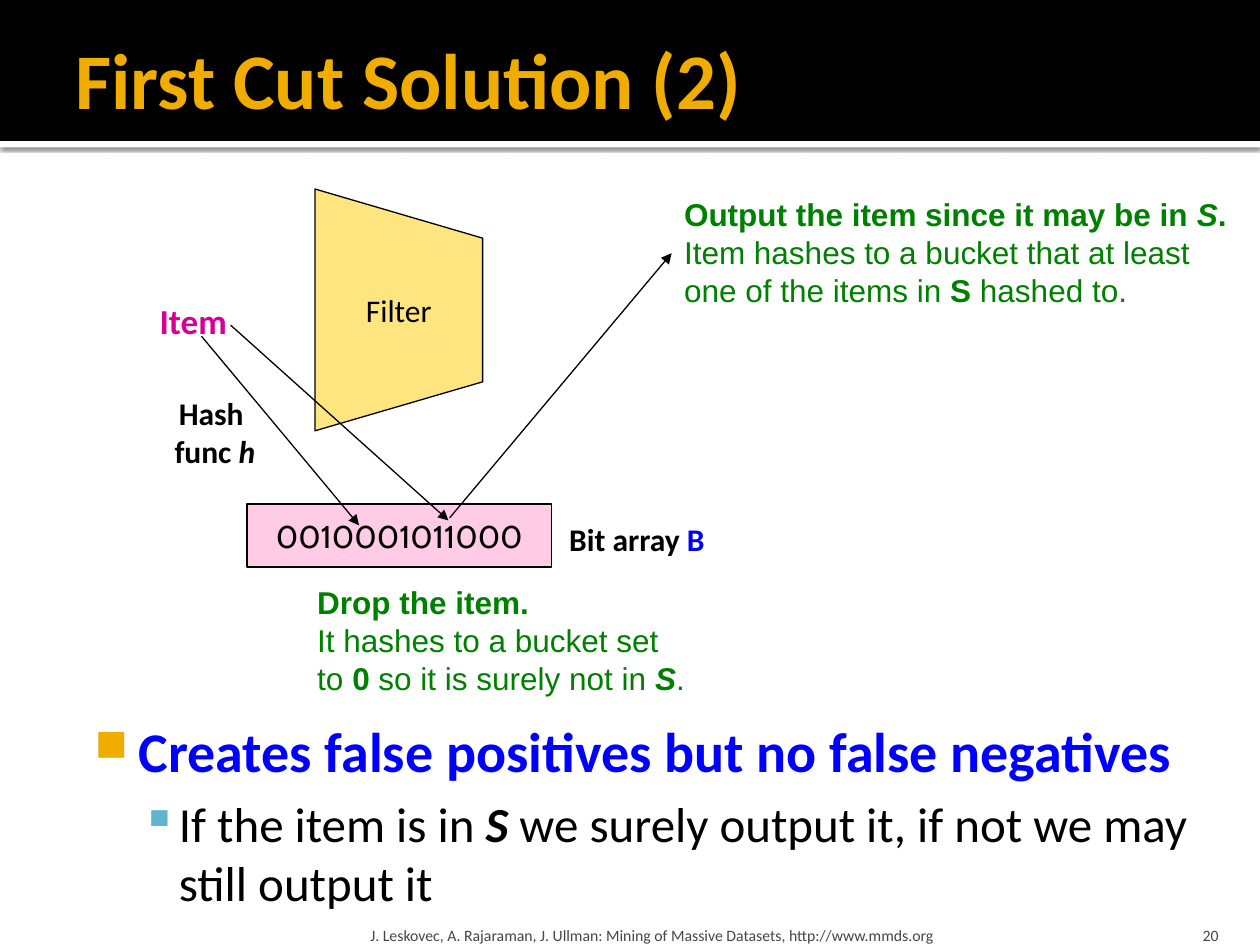
import pptx
import pptx.util
import pptx.dml.color
import pptx.enum.shapes
import pptx.enum.text
import pptx.oxml
import lxml.etree

Pt = pptx.util.Pt
ALIGN = pptx.enum.text.PP_ALIGN
ANCHOR = pptx.enum.text.MSO_ANCHOR
RECTANGLE = pptx.enum.shapes.MSO_SHAPE.RECTANGLE
STRAIGHT = pptx.enum.shapes.MSO_CONNECTOR.STRAIGHT
NAMESPACE = "http://schemas.openxmlformats.org/drawingml/2006/main"
PLAIN = {"bold": False}
BOLD = {"bold": True}
ITALIC = {"bold": True, "italic": True}


def set_color(color_format, value):
    color_format.rgb = pptx.dml.color.RGBColor.from_string(value)


def write(shape, paragraphs, font, frame=None, align=ALIGN.LEFT):
    text_frame = shape.text_frame
    for name, value in {"word_wrap": False, **(frame or {})}.items():
        setattr(text_frame, name, value)
    for index, runs in enumerate(paragraphs):
        paragraph = text_frame.add_paragraph() if index else text_frame.paragraphs[0]
        paragraph.alignment = align
        for text, changes in runs:
            for number, line in enumerate(text.split("\n")):
                if number:
                    paragraph.add_line_break()
                run = paragraph.add_run()
                run.text = line
                values = {**font, **changes}
                set_color(run.font.color, values.pop("color"))
                for name, value in values.items():
                    setattr(run.font, name, value)


presentation = pptx.Presentation()
presentation.slide_width = Pt(720)
presentation.slide_height = Pt(540)
slide = presentation.slides.add_slide(presentation.slide_layouts[6])
shapes = slide.shapes

for top, height, color in [(80.6, 3.6, "FFFFFF"), (0, 80.6, "000000")]:
    band = shapes.add_shape(RECTANGLE, 0, Pt(top), Pt(720), Pt(height))
    band.shadow.inherit = False
    band.fill.solid()
    set_color(band.fill.fore_color, color)
    band.line.fill.background()
    if color == "FFFFFF":
        effects = band._element.spPr.find(f"{{{NAMESPACE}}}effectLst")
        effects.append(pptx.oxml.parse_xml(
            f'<a:outerShdw xmlns:a="{NAMESPACE}" blurRad="{Pt(2.5)}" dist="{Pt(0.8)}" '
            'dir="5400000" rotWithShape="0"><a:srgbClr val="000000">'
            '<a:alpha val="60000"/></a:srgbClr></a:outerShdw>'))

builder = shapes.build_freeform(Pt(180), Pt(246.2), scale=1.0)
builder.add_line_segments(
    [(Pt(x), Pt(y)) for x, y in [(275.8, 218.2), (275.8, 136.1), (180, 108)]])
filter_shape = builder.convert_to_shape()
bit_array = shapes.add_shape(RECTANGLE, Pt(141.1), Pt(288), Pt(174.2), Pt(36))
for shape, color, label, font_name in [
    (filter_shape, "FFCC00", "Filter", "Calibri"),
    (bit_array, "FF99CC", "0010001011000", "Cabin"),
]:
    shape.shadow.inherit = False
    shape.fill.solid()
    set_color(shape.fill.fore_color, color)
    fill_color = shape._element.spPr.find(f".//{{{NAMESPACE}}}srgbClr")
    lxml.etree.SubElement(fill_color, f"{{{NAMESPACE}}}alpha", val="50000")
    set_color(shape.line.color, "000000")
    shape.line.width = Pt(0.75)
    write(shape, [[(label, {})]], {"name": font_name, "size": Pt(18), "color": "000000"},
          {"vertical_anchor": ANCHOR.MIDDLE}, ALIGN.CENTER)

for points in [
    (131.8, 185.8, 256.3, 297.4),
    (257, 295.9, 383.8, 144.7),
    (115.2, 192.2, 205.2, 300.2),
]:
    arrow = shapes.add_connector(STRAIGHT, *[Pt(value) for value in points])
    set_color(arrow.line.color, "000000")
    arrow.line.width = Pt(0.75)
    properties = arrow._element.spPr
    line = properties.find(f"{{{NAMESPACE}}}ln")
    lxml.etree.SubElement(line, f"{{{NAMESPACE}}}tailEnd", type="triangle")
    lxml.etree.SubElement(properties, f"{{{NAMESPACE}}}effectLst")

title_font = {"name": "Calibri", "size": Pt(45), "bold": True, "color": "F0AD00"}
item_font = {"name": "Calibri", "size": Pt(20), "bold": True, "color": "D60093"}
label_font = {"name": "Calibri", "size": Pt(18), "bold": True, "color": "000000"}
result_font = {"name": "Arial", "size": Pt(18), "color": "008000"}
footer_font = {"name": "Calibri", "size": Pt(9), "color": "454545"}
body_font = {"name": "Calibri", "size": Pt(28), "color": "000000"}
title_frame = {"word_wrap": True, "vertical_anchor": ANCHOR.MIDDLE}
footer_frame = {"word_wrap": True, "vertical_anchor": ANCHOR.BOTTOM, "margin_bottom": 0}
body_frame = {"word_wrap": True, "margin_left": Pt(4.3), "margin_top": Pt(7.2)}

text_boxes = [
    ((36, 5.8, 648, 77.8), [[("First Cut Solution (2)", {})]],
     title_font, title_frame, ALIGN.LEFT),
    ((84.2, 167.8, 55.4, 31.7), [[("Item", {})]], item_font, {}, ALIGN.LEFT),
    ((383.8, 108, 327.6, 72.7),
     [[("Output the item since it may be in ", BOLD), ("S", ITALIC), (".", BOLD)],
      [("Item hashes to a bucket that at least \none of the items in ", PLAIN),
       ("S", BOLD), (" hashed to.", PLAIN)]],
     result_font, {}, ALIGN.LEFT),
    ((89.3, 221.8, 67, 51.1), [[("Hash \nfunc ", {}), ("h", ITALIC)]],
     label_font, {"word_wrap": True}, ALIGN.CENTER),
    ((174.2, 329.8, 226.8, 72.7),
     [[("Drop the item.", BOLD)],
      [("It hashes to a bucket set \nto ", PLAIN), ("0", BOLD),
       (" so it is surely not in ", PLAIN), ("S", ITALIC), (".", PLAIN)]],
     result_font, {}, ALIGN.LEFT),
    ((318.2, 293.8, 97.2, 28.8), [[("Bit array ", {}), ("B", {"color": "0000FF"})]],
     label_font, {}, ALIGN.LEFT),
    ((208.1, 518.4, 433.4, 21.6),
     [[("J. Leskovec, A. Rajaraman, J. Ullman: Mining of Massive Datasets, "
        "http://www.mmds.org", {})]],
     footer_font, {**footer_frame, "margin_left": Pt(3.6)}, ALIGN.LEFT),
    ((645.8, 518.4, 57.6, 21.6), [[("20", {})]], footer_font, footer_frame, ALIGN.RIGHT),
    ((40.3, 402.5, 659.5, 125.3),
     [[("Creates false positives but no false negatives",
        {"size": Pt(32), "bold": True, "color": "0000FF"})],
      [("If the item is in ", PLAIN), ("S", ITALIC),
       (" we surely output it, if not we may still output it", PLAIN)]],
     body_font, body_frame, ALIGN.LEFT),
]
for box, paragraphs, font, frame, align in text_boxes:
    text_box = shapes.add_textbox(*[Pt(value) for value in box])
    write(text_box, paragraphs, font, frame, align)

bullets = [
    ("■", "F0AD00", 80, 34.6, 25.2, 0),
    ("▪", "60B5CC", 100, 57.6, 21.6, 5.6),
]
for paragraph, (mark, color, size, margin, hanging, before) in zip(
        text_box.text_frame.paragraphs, bullets):
    paragraph.space_before = Pt(before)
    properties = paragraph._p.get_or_add_pPr()
    properties.set("marL", str(Pt(margin)))
    properties.set("indent", str(-Pt(hanging)))
    bullet_color = lxml.etree.SubElement(properties, f"{{{NAMESPACE}}}buClr")
    lxml.etree.SubElement(bullet_color, f"{{{NAMESPACE}}}srgbClr", val=color)
    lxml.etree.SubElement(properties, f"{{{NAMESPACE}}}buSzPct", val=str(size * 1000))
    lxml.etree.SubElement(properties, f"{{{NAMESPACE}}}buChar", char=mark)

presentation.save("out.pptx")
